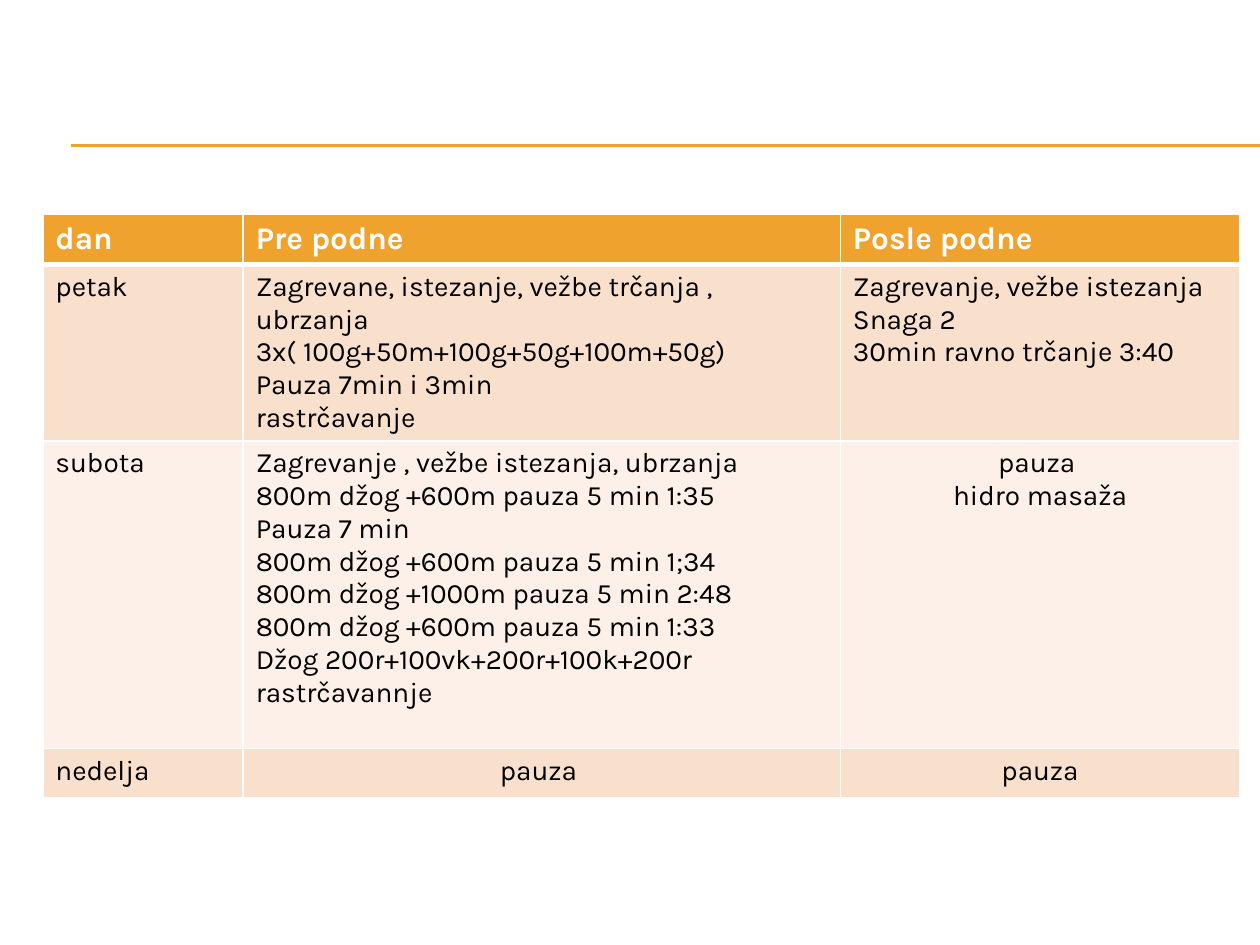
from dataclasses import dataclass

from lxml import etree
from pptx import Presentation
from pptx.dml.color import RGBColor
from pptx.enum import shapes, text
from pptx.oxml import ns
from pptx.util import Inches, Pt


@dataclass(frozen=True)
class Theme:
    font: str = "Karla"
    accent: str = "F0A22E"
    band_dark: str = "F9E0CD"
    band_light: str = "FCF0E8"
    light: str = "FFFFFF"
    ink: str = "000000"
    header_size: int = 18
    body_size: int = 16
    rule_width: float = 0.75


THEME = Theme()
COLUMN_WIDTHS = [1.59, 4.74, 3.17]
ROW_HEIGHTS = [0.4, 1.4, 2.44, 0.39]
SCHEDULE = [
    ["dan", "Pre podne", "Posle podne"],
    [
        "petak",
        "Zagrevane, istezanje, vežbe trčanja , ubrzanja\n"
        "3x( 100g+50m+100g+50g+100m+50g)\n"
        "Pauza 7min i 3min\n"
        "rastrčavanje",
        "Zagrevanje, vežbe istezanja\nSnaga 2\n30min ravno trčanje 3:40",
    ],
    [
        "subota",
        "Zagrevanje , vežbe istezanja, ubrzanja\n"
        "800m džog +600m pauza 5 min 1:35\n"
        "Pauza 7 min\n"
        "800m džog +600m pauza 5 min 1;34\n"
        "800m džog +1000m pauza 5 min 2:48\n"
        "800m džog +600m pauza 5 min 1:33\n"
        "Džog 200r+100vk+200r+100k+200r\n"
        "rastrčavannje",
        "pauza \nhidro masaža",
    ],
    ["nedelja", "pauza ", "pauza"],
]


def add_rule(slide, y):
    rule = slide.shapes.add_connector(
        shapes.MSO_CONNECTOR.STRAIGHT, Inches(0.56), Inches(y), Inches(10), Inches(y)
    )
    rule.line.color.rgb = RGBColor.from_string(THEME.accent)
    rule.line.width = Pt(THEME.rule_width)
    etree.SubElement(rule._element.spPr, ns.qn("a:effectLst"))


def set_borders(cell, top, bottom):
    """Draw white cell edges; widths are in points."""
    properties = cell._tc.get_or_add_tcPr()
    edges = {"lnL": 1, "lnR": 1, "lnT": top, "lnB": bottom}
    for position, (edge, width) in enumerate(edges.items()):
        line = etree.Element(ns.qn(f"a:{edge}"), w=str(Pt(width)))
        fill = etree.SubElement(line, ns.qn("a:solidFill"))
        etree.SubElement(fill, ns.qn("a:srgbClr"), val=THEME.light)
        properties.insert(position, line)


def fill_cell(cell, content, row):
    is_header = row == 0
    band = THEME.band_dark if row % 2 else THEME.band_light
    cell.fill.solid()
    cell.fill.fore_color.rgb = RGBColor.from_string(THEME.accent if is_header else band)
    set_borders(cell, top=3 if row == 1 else 1, bottom=3 if is_header else 1)

    # Rest entries are centred, training entries stay left
    is_rest = content.startswith("pauza")
    cell.text_frame.text = content
    for paragraph in cell.text_frame.paragraphs:
        paragraph.alignment = text.PP_ALIGN.CENTER if is_rest else text.PP_ALIGN.LEFT
        for run in paragraph.runs:
            run.font.name = THEME.font
            run.font.size = Pt(THEME.header_size if is_header else THEME.body_size)
            run.font.bold = is_header
            run.font.color.rgb = RGBColor.from_string(
                THEME.light if is_header else THEME.ink
            )


def add_schedule(slide):
    schedule = slide.shapes.add_table(
        len(ROW_HEIGHTS), len(COLUMN_WIDTHS), Inches(0.34), Inches(1.7),
        Inches(sum(COLUMN_WIDTHS)), Inches(sum(ROW_HEIGHTS)),
    ).table
    for column, width in zip(schedule.columns, COLUMN_WIDTHS):
        column.width = Inches(width)
    for row, height in zip(schedule.rows, ROW_HEIGHTS):
        row.height = Inches(height)
    for row, entries in enumerate(SCHEDULE):
        for column, content in enumerate(entries):
            fill_cell(schedule.cell(row, column), content, row)


def main():
    deck = Presentation()
    deck.slide_width, deck.slide_height = Inches(10), Inches(7.5)
    slide = deck.slides.add_slide(deck.slide_layouts[6])

    # Double rule across the top
    for y in (1.15, 1.16):
        add_rule(slide, y)

    # Training plan
    add_schedule(slide)
    deck.save("out.pptx")


if __name__ == "__main__":
    main()
